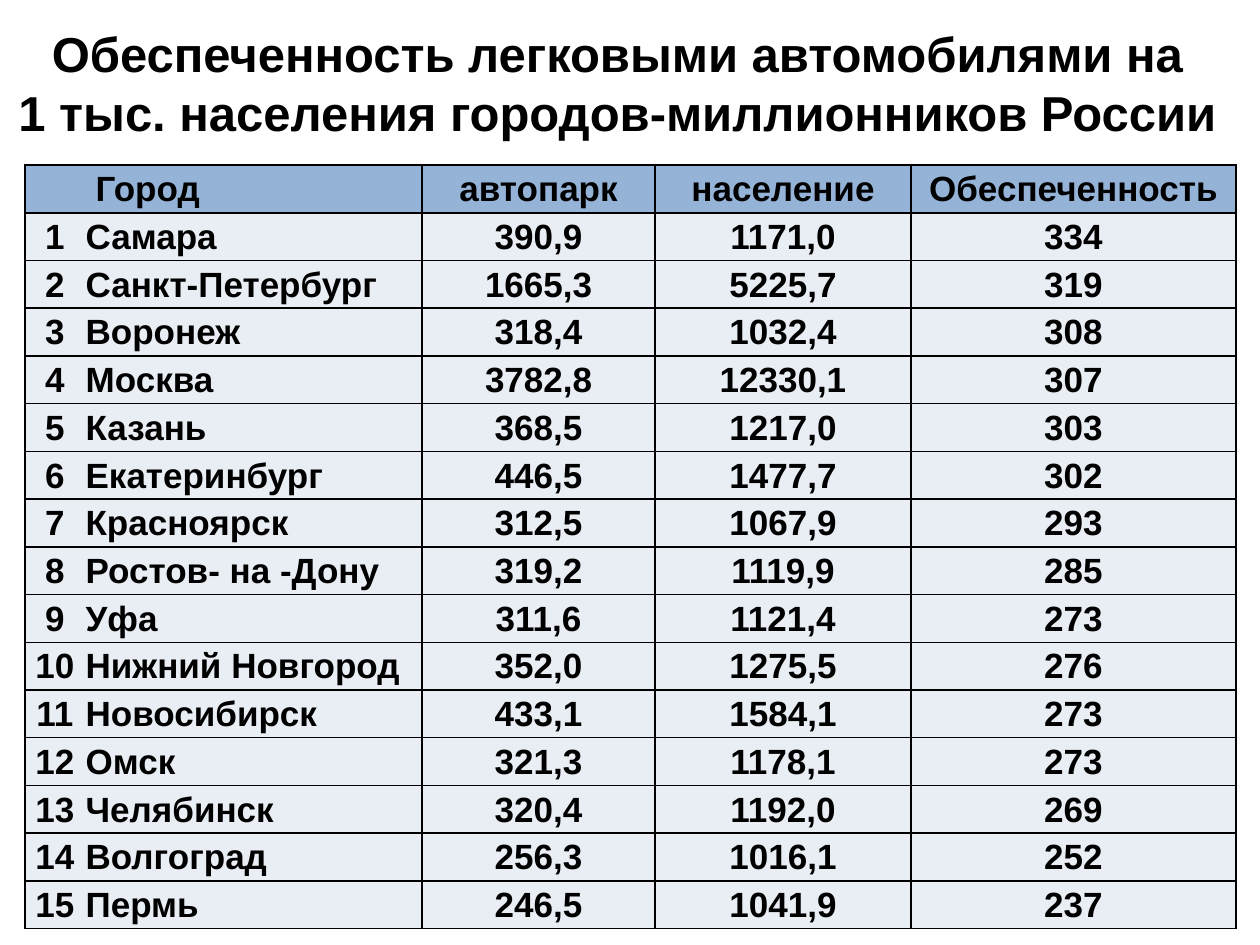
from dataclasses import dataclass

from lxml.etree import SubElement
from pptx import Presentation
from pptx.dml.color import RGBColor
from pptx.enum.text import MSO_ANCHOR, PP_ALIGN
from pptx.oxml.ns import qn
from pptx.util import Inches, Pt


@dataclass(frozen=True)
class Theme:
    """Colours, type sizes and line widths of the slide."""
    font: str = "Arial"
    ink: str = "000000"
    header_fill: str = "95B3D7"
    body_fill: str = "E9EDF4"
    title_size: int = 28
    table_size: int = 20
    border_width: int = 1


THEME = Theme()
TITLE = "Обеспеченность легковыми автомобилями на\n1 тыс. населения городов-миллионников России"
HEADER = ("", "Город", "автопарк", "население", "Обеспеченность")
CITIES = (
    ("Самара", "390,9", "1171,0", "334"),
    ("Санкт-Петербург", "1665,3", "5225,7", "319"),
    ("Воронеж", "318,4", "1032,4", "308"),
    ("Москва", "3782,8", "12330,1", "307"),
    ("Казань", "368,5", "1217,0", "303"),
    ("Екатеринбург", "446,5", "1477,7", "302"),
    ("Красноярск", "312,5", "1067,9", "293"),
    ("Ростов- на -Дону", "319,2", "1119,9", "285"),
    ("Уфа", "311,6", "1121,4", "273"),
    ("Нижний Новгород", "352,0", "1275,5", "276"),
    ("Новосибирск", "433,1", "1584,1", "273"),
    ("Омск", "321,3", "1178,1", "273"),
    ("Челябинск", "320,4", "1192,0", "269"),
    ("Волгоград", "256,3", "1016,1", "252"),
    ("Пермь", "246,5", "1041,9", "237"),
)
COLUMN_WIDTHS = (0.47, 2.68, 1.85, 2.03, 2.58)
NUMBER_COLUMN, CITY_COLUMN = 0, 1


def write_text(frame, text, size, align=PP_ALIGN.CENTER):
    """Write bold text into a frame, turning newlines into line breaks."""
    paragraph = frame.paragraphs[0]
    paragraph.alignment = align
    for index, line in enumerate(text.split("\n")):
        if index:
            paragraph.add_line_break()
        run = paragraph.add_run()
        run.text = line
        run.font.name = THEME.font
        run.font.size = Pt(size)
        run.font.bold = True
        run.font.color.rgb = RGBColor.from_string(THEME.ink)


def set_borders(cell, hidden_side):
    """Rule all sides of a cell except the hidden one."""
    properties = cell._tc.get_or_add_tcPr()
    for side in ("lnL", "lnR", "lnT", "lnB"):
        line = SubElement(properties, qn(f"a:{side}"), w=str(Pt(THEME.border_width)))
        if side == hidden_side:
            SubElement(line, qn("a:noFill"))
        else:
            fill = SubElement(line, qn("a:solidFill"))
            SubElement(fill, qn("a:srgbClr"), val=THEME.ink)


def add_title(slide, left, top, width, height):
    """Place the slide title in its box."""
    title = slide.shapes.title
    title.left, title.top, title.width, title.height = left, top, width, height
    title.text_frame.word_wrap = True
    title.text_frame.vertical_anchor = MSO_ANCHOR.MIDDLE
    write_text(title.text_frame, TITLE, THEME.title_size)


def add_city_table(slide, left, top, width, height):
    """Place the table of numbered cities in its box."""
    rows = [HEADER] + [(str(number), *city) for number, city in enumerate(CITIES, 1)]
    table = slide.shapes.add_table(len(rows), len(HEADER), left, top, width, height).table
    for column, column_width in zip(table.columns, COLUMN_WIDTHS):
        column.width = Inches(column_width)
    hidden_sides = {NUMBER_COLUMN: "lnR", CITY_COLUMN: "lnL"}
    for row_index, row in enumerate(rows):
        is_header = row_index == 0
        for column_index, text in enumerate(row):
            cell = table.cell(row_index, column_index)
            is_city = column_index == CITY_COLUMN
            cell.margin_left = Inches(0.09 if is_header and is_city else 0.01)
            cell.margin_right = cell.margin_top = Inches(0.01)
            cell.margin_bottom = 0
            cell.vertical_anchor = MSO_ANCHOR.MIDDLE
            set_borders(cell, hidden_sides.get(column_index))
            cell.fill.solid()
            cell.fill.fore_color.rgb = RGBColor.from_string(
                THEME.header_fill if is_header else THEME.body_fill)
            if text:
                write_text(cell.text_frame, text, THEME.table_size,
                           align=PP_ALIGN.LEFT if is_city else PP_ALIGN.CENTER)


def main():
    """Build and save the presentation."""
    presentation = Presentation()
    presentation.slide_width, presentation.slide_height = Inches(10), Inches(7.5)
    slide = presentation.slides.add_slide(presentation.slide_layouts[5])
    add_title(slide, 0, 0, Inches(9.8), Inches(1.31))
    add_city_table(slide, Inches(0.2), Inches(1.31), Inches(9.61), Inches(6.06))
    presentation.save("out.pptx")


if __name__ == "__main__":
    main()
